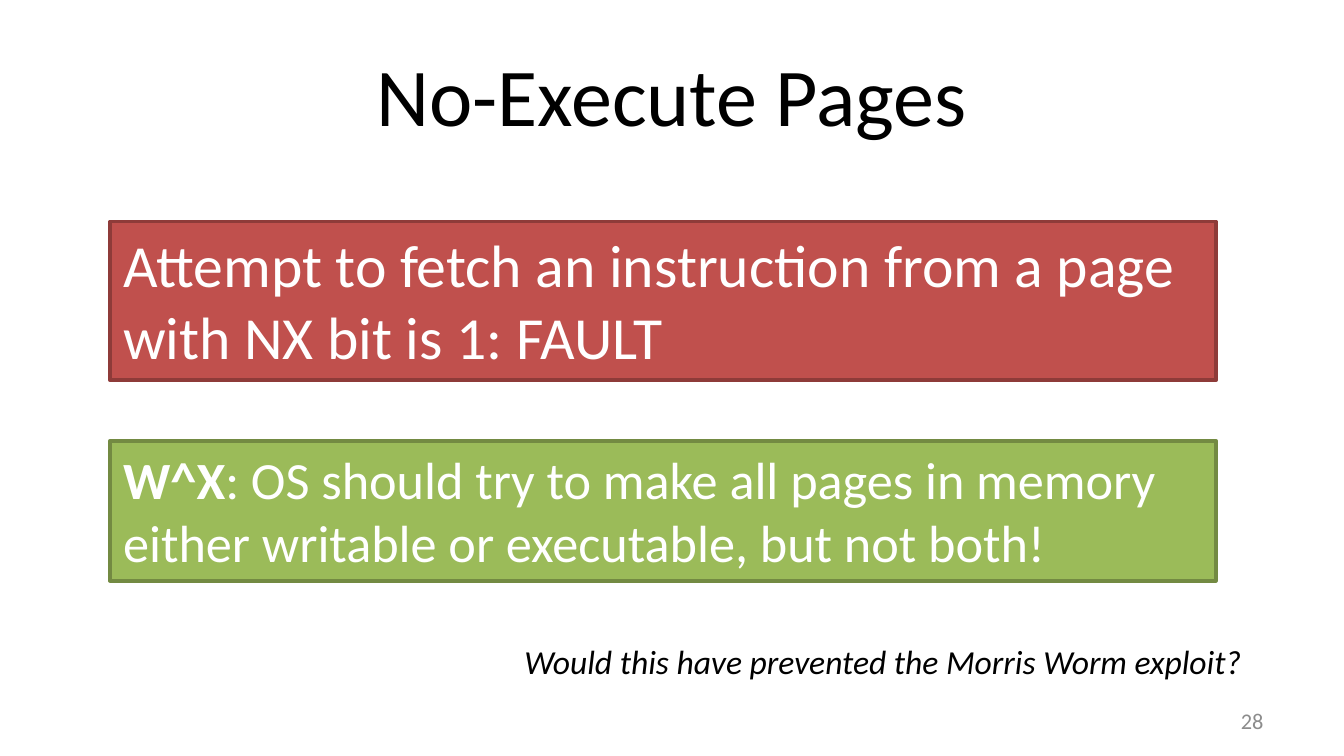
from dataclasses import dataclass

from pptx import Presentation
from pptx.dml.color import RGBColor
from pptx.enum.shapes import MSO_SHAPE as Preset
from pptx.enum.text import MSO_ANCHOR as Anchor, MSO_AUTO_SIZE as AutoSize, PP_ALIGN as Align
from pptx.shapes.autoshape import Shape
from pptx.slide import Slide
from pptx.util import Cm, Pt

FONT = "Calibri"


@dataclass
class Frame:
    left: float
    top: float
    width: float
    height: float

    def lengths(self) -> tuple[Cm, Cm, Cm, Cm]:
        return Cm(self.left), Cm(self.top), Cm(self.width), Cm(self.height)


@dataclass
class TextStyle:
    size: int
    color: str
    align: Align = Align.LEFT
    anchor: Anchor = Anchor.TOP
    italic: bool = False
    wrap: bool = True
    auto_size: AutoSize = AutoSize.NONE


@dataclass
class Statement:
    frame: Frame
    fill: str
    outline: str
    size: int
    body: str
    term: str = ""


def rgb(color: str) -> RGBColor:
    return RGBColor.from_string(color)


def write(box: Shape, body: str, style: TextStyle, term: str = "") -> None:
    text_frame = box.text_frame
    text_frame.word_wrap = style.wrap
    text_frame.auto_size = style.auto_size
    text_frame.vertical_anchor = style.anchor
    para = text_frame.paragraphs[0]
    para.alignment = style.align
    for words in filter(None, (term, body)):
        span = para.add_run()
        span.text = words
        span.font.name = FONT
        span.font.size = Pt(style.size)
        span.font.bold = words == term
        span.font.italic = style.italic
        span.font.color.rgb = rgb(style.color)


def add_title(page: Slide, frame: Frame, body: str) -> None:
    title = page.shapes.title
    title.left, title.top, title.width, title.height = frame.lengths()
    write(title, body, TextStyle(44, "000000", Align.CENTER, Anchor.MIDDLE))


def add_label(page: Slide, frame: Frame, body: str, style: TextStyle) -> None:
    write(page.shapes.add_textbox(*frame.lengths()), body, style)


def add_statement(page: Slide, statement: Statement) -> None:
    box = page.shapes.add_shape(Preset.RECTANGLE, *statement.frame.lengths())
    box.shadow.inherit = False
    box.fill.solid()
    box.fill.fore_color.rgb = rgb(statement.fill)
    box.line.color.rgb = rgb(statement.outline)
    box.line.width = Pt(2)
    style = TextStyle(statement.size, "FFFFFF", auto_size=AutoSize.SHAPE_TO_FIT_TEXT)
    write(box, statement.body, style, statement.term)


STATEMENTS = [
    Statement(Frame(2.08, 4.19, 20.9, 3), "C0504D", "8E3B39", 32,
              "Attempt to fetch an instruction from a page with NX bit is 1: FAULT"),
    Statement(Frame(2.08, 8.33, 20.9, 2.65), "9BBB59", "738A42", 28,
              ": OS should try to make all pages in memory either writable "
              "or executable, but not both!", "W^X"),
]


def main() -> None:
    deck = Presentation()
    deck.slide_width, deck.slide_height = Cm(25.4), Cm(14.29)
    page = deck.slides.add_slide(deck.slide_layouts[5])
    add_title(page, Frame(1.27, 0.58, 22.86, 2.39), "No-Execute Pages")
    add_label(page, Frame(18.2, 13.24, 5.93, 0.76), "28",
              TextStyle(12, "8C8C8C", Align.RIGHT, Anchor.MIDDLE))
    for statement in STATEMENTS:
        add_statement(page, statement)
    add_label(page, Frame(9.66, 11.99, 14.47, 1.03),
              "Would this have prevented the Morris Worm exploit?",
              TextStyle(18, "000000", italic=True, wrap=False,
                        auto_size=AutoSize.SHAPE_TO_FIT_TEXT))
    deck.save("out.pptx")


if __name__ == "__main__":
    main()
